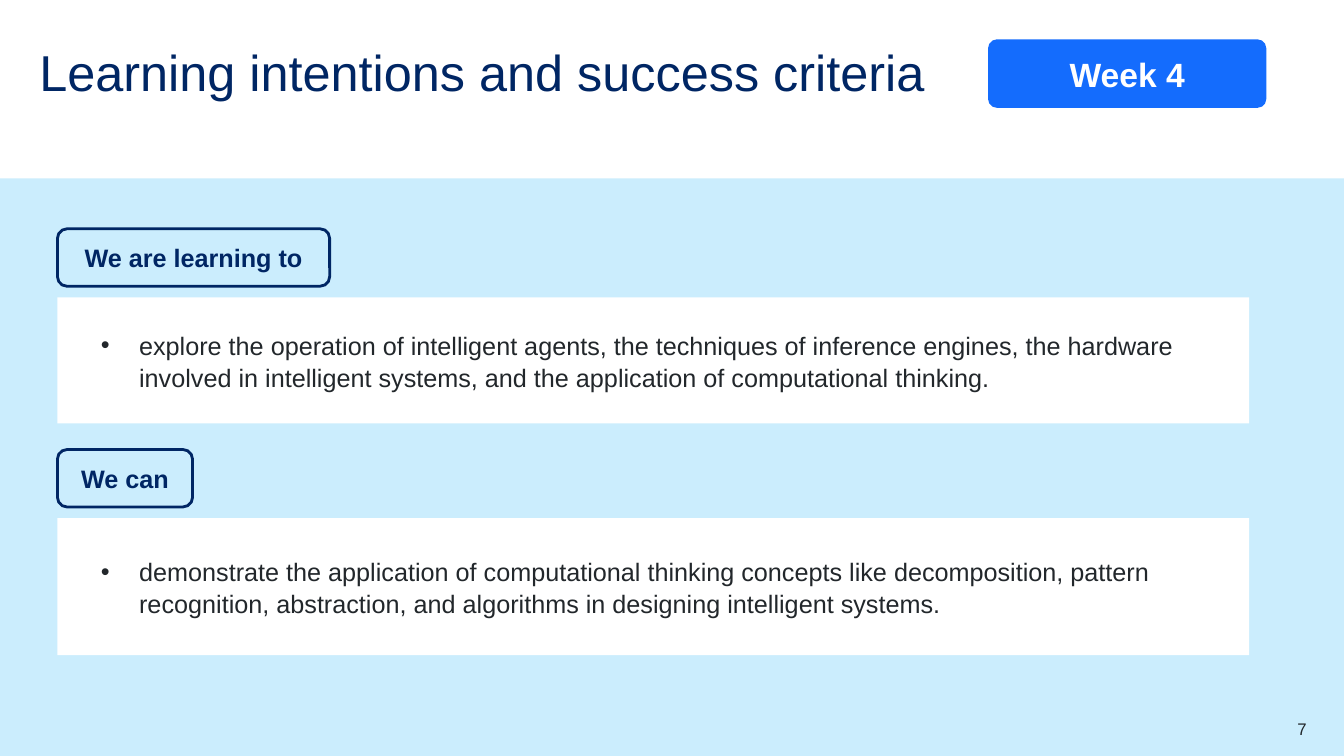
from pptx import Presentation
from pptx.dml.color import RGBColor
from pptx.enum.shapes import MSO_SHAPE
from pptx.enum.text import MSO_ANCHOR, MSO_AUTO_SIZE, PP_ALIGN
from pptx.util import Inches, Pt

NAVY = RGBColor(0x00, 0x26, 0x64)
BLUE = RGBColor(0x14, 0x6C, 0xFD)
SKY = RGBColor(0xCB, 0xED, 0xFD)
INK = RGBColor(0x22, 0x27, 0x2B)
WHITE = RGBColor(0xFF, 0xFF, 0xFF)

LEFT = 0.57
GOALS = [
    # label, label width, top, card height, text
    ("We are learning to", 2.7, 2.27, 1.25,
     "explore the operation of intelligent agents, the techniques of inference "
     "engines, the hardware involved in intelligent systems, and the application "
     "of computational thinking."),
    ("We can", 1.34, 4.46, 1.36,
     "demonstrate the application of computational thinking concepts like "
     "decomposition, pattern recognition, abstraction, and algorithms in "
     "designing intelligent systems."),
]


def place(shape, x, y, w, h):
    shape.left, shape.top = Inches(x), Inches(y)
    shape.width, shape.height = Inches(w), Inches(h)


def write(shape, text, size, color, bold=False, align=PP_ALIGN.LEFT,
          anchor=MSO_ANCHOR.MIDDLE, pad=(0, 0, 0, 0)):
    frame = shape.text_frame
    frame.word_wrap = True
    frame.auto_size = MSO_AUTO_SIZE.NONE
    frame.vertical_anchor = anchor
    frame.margin_left, frame.margin_top, frame.margin_right, frame.margin_bottom = map(Inches, pad)
    para = frame.paragraphs[0]
    para.text = text
    para.alignment = align
    para.space_before = Pt(0)
    font = para.font
    font.name, font.size, font.bold = "Arial", Pt(size), bold
    font.color.rgb = color
    return para


prs = Presentation()
prs.slide_width, prs.slide_height = Inches(13.33), Inches(7.5)
slide = prs.slides.add_slide(prs.slide_layouts[3])
shapes = slide.shapes
title, *cards = list(slide.placeholders)[:3]

# Sky panel, sent to the back
panel = shapes.add_shape(MSO_SHAPE.RECTANGLE, 0, Inches(1.77), Inches(13.33), Inches(5.73))
panel.shadow.inherit = False
panel.fill.solid()
panel.fill.fore_color.rgb = SKY
panel.line.fill.background()
shapes._spTree.insert(2, panel._element)

# Title
place(title, 0.39, 0.48, 11.22, 0.57)
para = write(title, "Learning intentions and success criteria", 36, NAVY, anchor=MSO_ANCHOR.TOP)
para.line_spacing = 0.9

# Week badge
badge = shapes.add_shape(MSO_SHAPE.ROUNDED_RECTANGLE, Inches(9.8), Inches(0.39),
                         Inches(2.76), Inches(0.68))
badge.adjustments[0] = 0.13
badge.shadow.inherit = False
badge.fill.solid()
badge.fill.fore_color.rgb = BLUE
badge.line.fill.background()
write(badge, "Week 4", 24, WHITE, True, PP_ALIGN.CENTER)

# Labels, each above its bulleted card
for card, (name, width, top, height, text) in zip(cards, GOALS):
    label = shapes.add_shape(MSO_SHAPE.ROUNDED_RECTANGLE, Inches(LEFT), Inches(top),
                             Inches(width), Inches(0.57))
    label.shadow.inherit = False
    label.fill.background()
    label.line.color.rgb = NAVY
    label.line.width = Pt(2)
    write(label, name, 18, NAVY, True, PP_ALIGN.CENTER, pad=(0, 0.05, 0, 0.05))

    place(card, LEFT, top + 0.68, 11.82, height)
    card.fill.solid()
    card.fill.fore_color.rgb = WHITE
    para = write(card, text, 18, INK, pad=(0.43, 0.05, 0.1, 0.05))
    para.line_spacing = 1.05
    props = para._p.get_or_add_pPr()
    props.set("marL", str(Inches(0.38)))
    props.set("indent", str(-Inches(0.38)))

# Page number
page = shapes.add_textbox(Inches(12.17), Inches(7.13), Inches(0.79), Inches(0.2))
write(page, "7", 12, INK, align=PP_ALIGN.RIGHT, anchor=MSO_ANCHOR.TOP)

prs.save("out.pptx")
